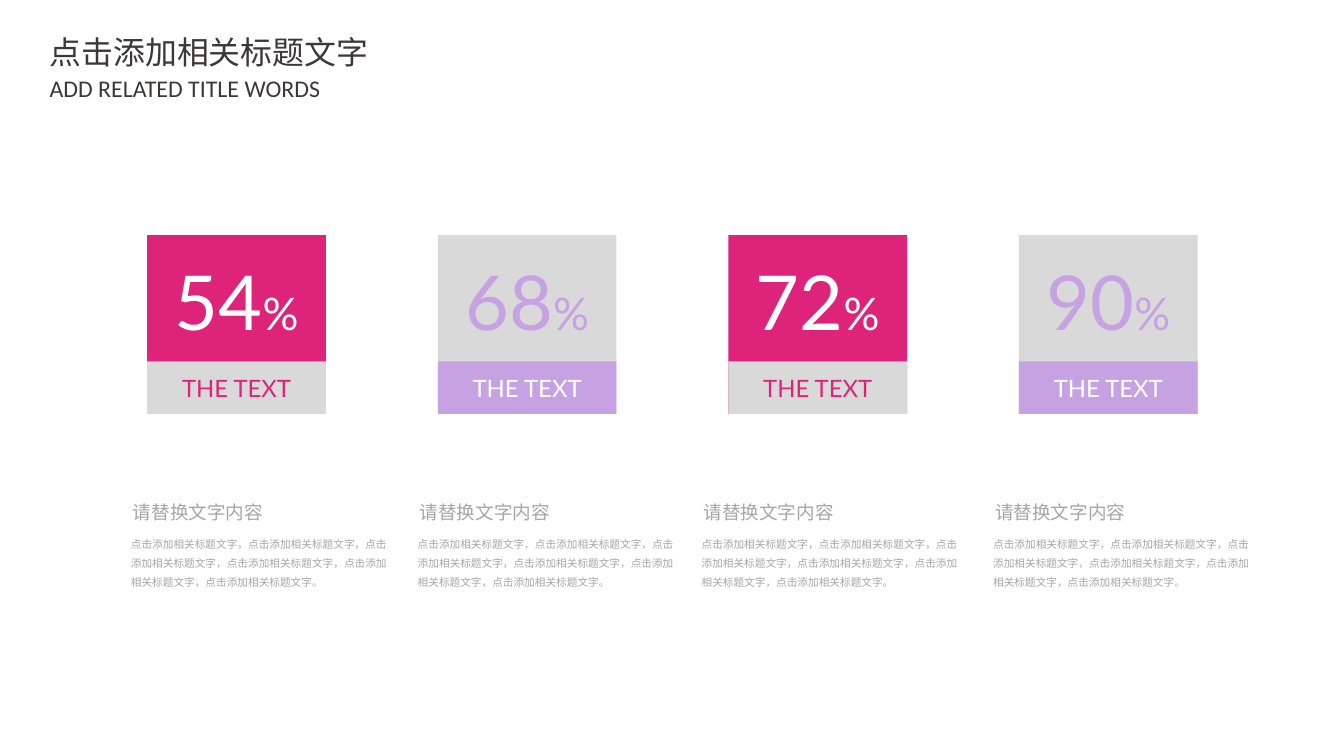
from dataclasses import dataclass

from lxml.etree import SubElement
from pptx import Presentation
from pptx.dml.color import RGBColor
from pptx.enum.shapes import MSO_SHAPE
from pptx.enum.text import MSO_ANCHOR, MSO_AUTO_SIZE, PP_ALIGN
from pptx.oxml.ns import qn
from pptx.shapes.autoshape import Shape
from pptx.slide import Slide
from pptx.text.text import TextFrame, _Paragraph
from pptx.util import Inches, Pt

COLORS = {
    "pink": "DD247A",
    "lilac": "C7A2E3",
    "light": "D9D9D9",
    "white": "FFFFFF",
    "gray": "A6A6A6",
    "dark": "3B3838",
}
CJK_FONT = "Noto Sans CJK SC"
CARD_LEFT, CARD_TOP, CARD_PITCH, CARD_SIZE = 1.54, 2.46, 3.04, 1.87
CAPTION_HEIGHT = 0.55
HEADING = "请替换文字内容"
DESCRIPTION = "点击添加相关标题文字，" * 5 + "点击添加相关标题文字。"


@dataclass(frozen=True)
class CardStyle:
    fill: str
    number: str
    caption_fill: str
    caption: str


@dataclass(frozen=True)
class Metric:
    value: str
    style: CardStyle
    text_left: float


PINK_CARD = CardStyle("pink", "white", "light", "pink")
LILAC_CARD = CardStyle("light", "lilac", "lilac", "white")
METRICS = [
    Metric("54", PINK_CARD, 1.28),
    Metric("68", LILAC_CARD, 4.28),
    Metric("72", PINK_CARD, 7.25),
    Metric("90", LILAC_CARD, 10.3),
]


def rgb(color: str) -> RGBColor:
    return RGBColor.from_string(COLORS[color])


def style_paragraph(paragraph: _Paragraph, font: str, color: str, size: float | None = None) -> None:
    """Format the whole paragraph; Chinese glyphs always use the CJK font."""
    paragraph.font.name = font
    paragraph.font.color.rgb = rgb(color)
    if size is not None:
        paragraph.font.size = Pt(size)
    properties = paragraph._p.pPr.find(qn("a:defRPr"))
    SubElement(properties, qn("a:ea"), typeface=CJK_FONT)


def fill_text(frame: TextFrame, text: str, font: str, color: str, size: float,
              spacing: float = 1.0, wrap: bool = True) -> None:
    frame.word_wrap = wrap
    frame.auto_size = MSO_AUTO_SIZE.NONE
    frame.vertical_anchor = MSO_ANCHOR.TOP
    paragraph = frame.paragraphs[0]
    paragraph.text = text
    paragraph.alignment = PP_ALIGN.LEFT
    paragraph.line_spacing = spacing
    style_paragraph(paragraph, font, color, size)


def add_text_box(slide: Slide, left: float, top: float, width: float, height: float) -> TextFrame:
    box = slide.shapes.add_textbox(Inches(left), Inches(top), Inches(width), Inches(height))
    return box.text_frame


def add_panel(slide: Slide, left: float, top: float, height: float, fill: str) -> Shape:
    panel = slide.shapes.add_shape(
        MSO_SHAPE.RECTANGLE, Inches(left), Inches(top), Inches(CARD_SIZE), Inches(height))
    panel.shadow.inherit = False
    panel.fill.solid()
    panel.fill.fore_color.rgb = rgb(fill)
    panel.line.fill.background()
    return panel


def add_card(slide: Slide, left: float, metric: Metric) -> None:
    style = metric.style
    add_panel(slide, left, CARD_TOP, CARD_SIZE, style.fill)

    caption_top = CARD_TOP + CARD_SIZE - CAPTION_HEIGHT
    caption = add_panel(slide, left, caption_top, CAPTION_HEIGHT, style.caption_fill).text_frame
    caption.vertical_anchor = MSO_ANCHOR.MIDDLE
    caption.text = "THE TEXT"
    caption.paragraphs[0].alignment = PP_ALIGN.CENTER
    style_paragraph(caption.paragraphs[0], "Lato", style.caption, 18)

    percentage = add_text_box(slide, left + 0.18, CARD_TOP + 0.16, 1.51, 1.06)
    percentage.word_wrap = False
    paragraph = percentage.paragraphs[0]
    paragraph.alignment = PP_ALIGN.CENTER
    style_paragraph(paragraph, "Lato", style.number)
    for text, size in ((metric.value, 57), ("%", 33.8)):
        run = paragraph.add_run()
        run.text = text
        run.font.size = Pt(size)


def add_explanation(slide: Slide, left: float) -> None:
    description = add_text_box(slide, left, 5.51, 2.9, 0.7)
    description.margin_left = description.margin_right = Inches(0.09)
    fill_text(description, DESCRIPTION, CJK_FONT, "gray", 8, spacing=1.5)

    heading = add_text_box(slide, left, 5.14, 2.66, 0.39)
    heading.margin_left = heading.margin_right = Inches(0.11)
    fill_text(heading, HEADING, "Arial", "gray", 14, spacing=1.2)


def add_titles(slide: Slide) -> None:
    title = slide.shapes.title
    title.left, title.top = Inches(0.41), Inches(0.29)
    title.width, title.height = Inches(3.58), Inches(0.51)
    subtitle = add_text_box(slide, 0.41, 0.72, 3.07, 0.41)
    for frame, text, font, size in (
        (title.text_frame, "点击添加相关标题文字", CJK_FONT, 24),
        (subtitle, "ADD RELATED TITLE WORDS", "Calibri", 18),
    ):
        frame.margin_left = frame.margin_right = Inches(0.11)
        fill_text(frame, text, font, "dark", size, wrap=False)


def main() -> None:
    presentation = Presentation()
    presentation.slide_width = Inches(14.06)
    presentation.slide_height = Inches(7.91)
    slide = presentation.slides.add_slide(presentation.slide_layouts.get_by_name("Title Only"))
    add_titles(slide)
    for index, metric in enumerate(METRICS):
        add_card(slide, CARD_LEFT + index * CARD_PITCH, metric)
        add_explanation(slide, metric.text_left)
    presentation.save("out.pptx")


if __name__ == "__main__":
    main()
